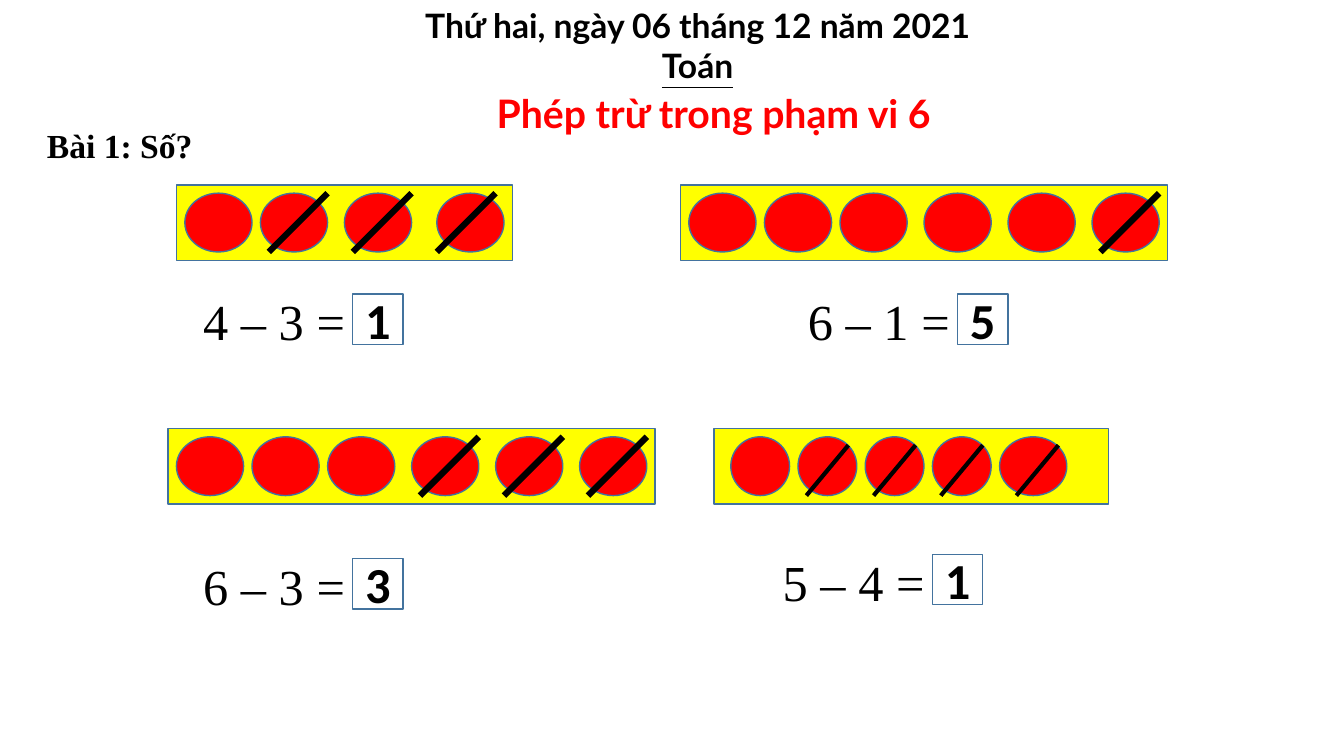
from pptx import Presentation
from pptx import util as u
from pptx.dml.color import RGBColor
from pptx.enum import shapes, text
from pptx.oxml import parse_xml
from pptx.oxml.ns import nsdecls

COLUMNS, ROWS = 160, 90
RED, YELLOW, WHITE, BLACK, OUTLINE = "FF0000", "FFFF00", "FFFFFF", "000000", "43739E"
SERIF, HEADING, BODY = "Times New Roman", "Lato", "Calibri"
CENTER = text.PP_ALIGN.CENTER


def color(hex_string):
    return RGBColor.from_string(hex_string)


class Worksheet:
    """Holds the slide and its grid; positions are (column, row)."""

    def __init__(self, presentation):
        self.slide = presentation.slides.add_slide(presentation.slide_layouts[5])
        self.column = presentation.slide_width / COLUMNS
        self.row = presentation.slide_height / ROWS

    def place(self, left, top, width, height):
        return (round(left * self.column), round(top * self.row),
                round(width * self.column), round(height * self.row))

    def set_text(self, shape, content, size, font, hex_color=BLACK, bold=True, align=None):
        frame = shape.text_frame
        frame.text = content
        frame.word_wrap = True
        for paragraph in frame.paragraphs:
            paragraph.alignment = align
            paragraph.line_spacing = 1.0
            for run in paragraph.runs:
                run.font.size = u.Pt(size)
                run.font.name = font
                run.font.bold = bold
                run.font.color.rgb = color(hex_color)

    def title(self, content, box):
        title = self.slide.shapes.title
        title.left, title.top, title.width, title.height = self.place(*box)
        self.set_text(title, content, 28, HEADING, RED, align=CENTER)
        title.text_frame.vertical_anchor = text.MSO_ANCHOR.TOP
        title.text_frame.auto_size = text.MSO_AUTO_SIZE.NONE

    def label(self, content, box, size, font, **style):
        label = self.slide.shapes.add_textbox(*self.place(*box))
        self.set_text(label, content, size, font, **style)
        label.text_frame.auto_size = text.MSO_AUTO_SIZE.SHAPE_TO_FIT_TEXT
        return label

    def block(self, kind, box, fill):
        shape = self.slide.shapes.add_shape(kind, *self.place(*box))
        shape.shadow.inherit = False
        shape.fill.solid()
        shape.fill.fore_color.rgb = color(fill)
        shape.line.color.rgb = color(OUTLINE)
        shape.line.width = u.Pt(1)
        return shape

    def strike(self, left, top, width, height, weight):
        x, y, dx, dy = self.place(left, top, width, height)
        line = self.slide.shapes.add_connector(
            shapes.MSO_CONNECTOR.STRAIGHT, x + dx, y, x, y + dy)
        line.line.color.rgb = color(BLACK)
        line.line.width = u.Pt(weight)
        line._element.spPr.append(parse_xml(f"<a:effectLst {nsdecls('a')}/>"))

    def strip(self, left, top, width, counters, strikes, strike_size, weight):
        """Yellow strip of red counters, some of them crossed out."""
        self.block(shapes.MSO_SHAPE.RECTANGLE, (left, top, width, 9), YELLOW)
        for column, counter_width in counters:
            self.block(shapes.MSO_SHAPE.OVAL, (column, top + 1, counter_width, 7), RED)
        strike_width, strike_height = strike_size
        for column in strikes:
            self.strike(column, top + 8 - strike_height, strike_width, strike_height, weight)

    def equation(self, left, top, content, answer):
        self.label(content, (left, top, 32, 8.5), 36, SERIF, bold=False)
        box = self.block(shapes.MSO_SHAPE.RECTANGLE, (left + 19, top + 1, 6, 6), WHITE)
        self.set_text(box, answer, 36, BODY, align=CENTER)
        box.text_frame.vertical_anchor = text.MSO_ANCHOR.MIDDLE


def wide(*columns):
    return [(column, 8) for column in columns]


# Strip left, top, width, counters, strike columns, strike size, strike weight
STRIPS = [
    (21, 22, 40, wide(22, 31, 41, 52), (32, 42, 52), (7, 7), 4.5),
    (81, 22, 58, wide(82, 91, 100, 110, 120, 130), (131,), (7, 7), 4.5),
    (20, 51, 58, wide(21, 30, 39, 49, 59, 69), (50, 60, 70), (7, 7), 4.5),
    (85, 51, 47, [(87, 7), (95, 7), (103, 7), (111, 7), (119, 8)],
     (96, 104, 112, 121), (5, 6), 3),
]
EQUATIONS = [
    (23, 34, "4 – 3 =", "1"),
    (95, 34, "6 – 1 =", "5"),
    (23, 65.5, "6 – 3 =", "3"),
    (92, 65, "5 – 4 =", "1"),
]


def main():
    presentation = Presentation()
    presentation.slide_width = u.Inches(13.33)
    presentation.slide_height = u.Inches(7.5)
    sheet = Worksheet(presentation)

    # Headings
    sheet.title("Phép trừ trong phạm vi 6", (34.2, 10, 101.5, 6.8))
    date = sheet.label("Thứ hai, ngày 06 tháng 12 năm 2021\nToán",
                       (32.3, 0, 101.5, 10.9), 24, HEADING, align=CENTER)
    date.text_frame.paragraphs[1].runs[0].font.underline = True
    sheet.label("Bài 1: Số?", (4.4, 14.3, 31.6, 6), 24, SERIF)

    # Exercises
    for strip in STRIPS:
        sheet.strip(*strip)
    for equation in EQUATIONS:
        sheet.equation(*equation)

    presentation.save("out.pptx")


if __name__ == "__main__":
    main()
